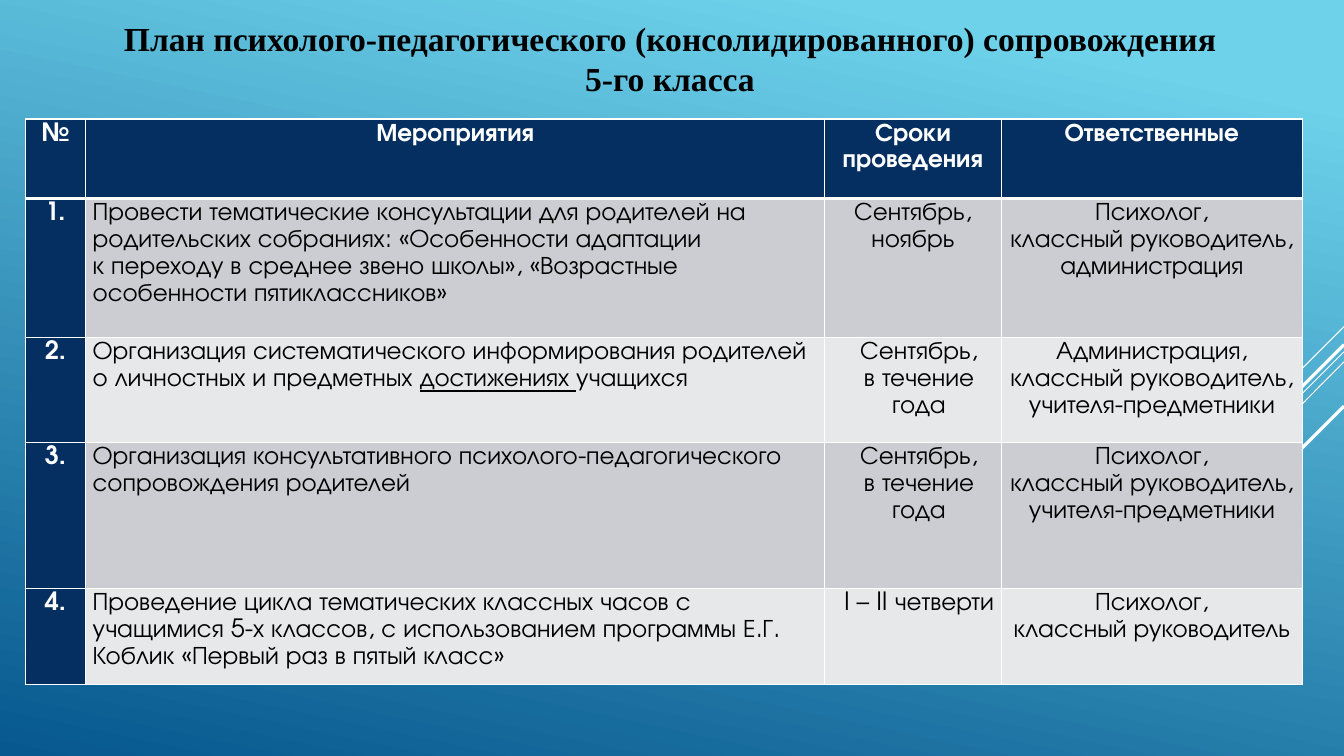
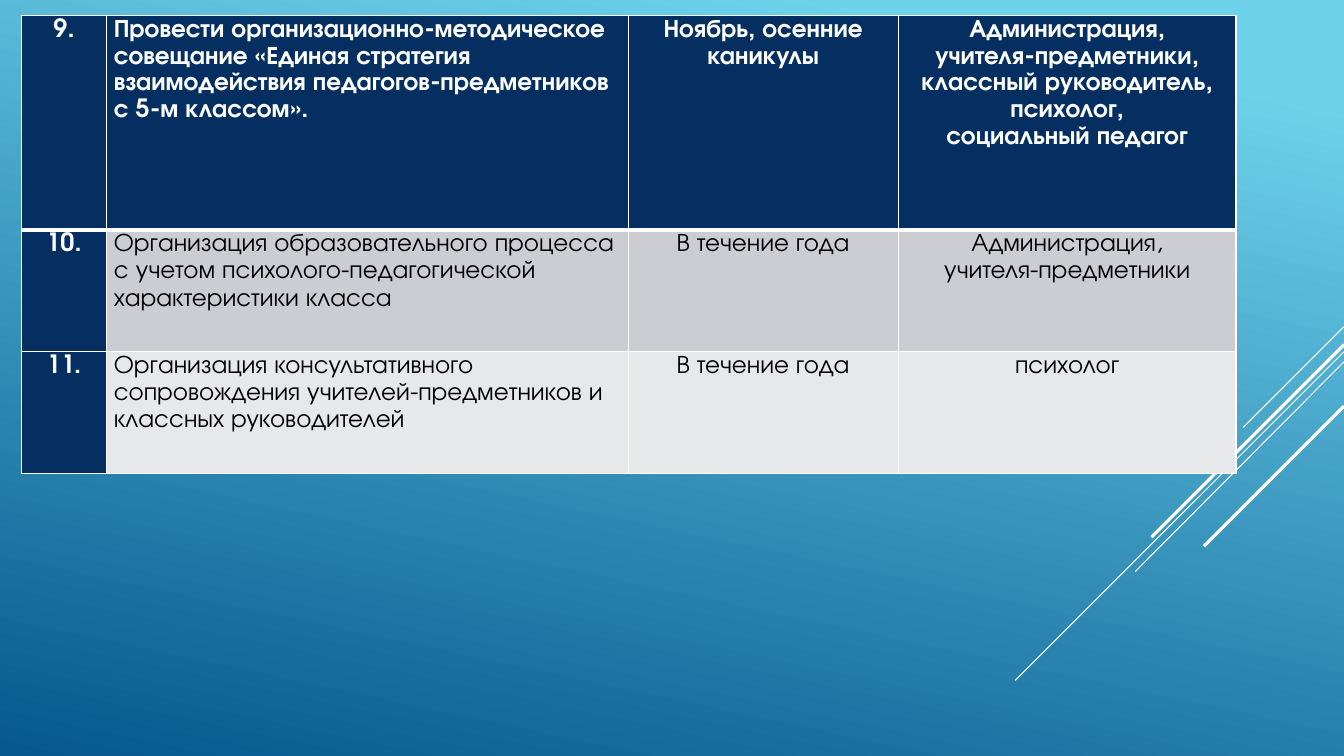
from lxml.etree import SubElement
from pptx import Presentation
from pptx.dml.color import RGBColor
from pptx.enum.shapes import MSO_CONNECTOR
from pptx.enum.text import MSO_ANCHOR, MSO_AUTO_SIZE, PP_ALIGN
from pptx.oxml.ns import qn
from pptx.util import Inches, Pt

NAVY, WHITE, BLACK = "052F61", "FFFFFF", "000000"
BANDS = ("CCCDD2", "E7E8EA")
BACKGROUND = ((0.1, "6ED2EB"), (1, "06588E"))
BODY_FONT, TITLE_FONT = "TeX Gyre Adventor", "Times New Roman"

RAYS = [
    (3.24, 12.33, 4.24, 0.75),
    (3.49, 10.07, 6.75, 0.75),
    (3.59, 11.26, 5.67, 0.75),
    (3.42, 11.42, 5.33, 2.25),
    (4.03, 11.94, 5.42, 2.25),
]

TITLE = ["План психолого-педагогического (консолидированного) сопровождения", "5-го класса"]

PLAN = [
    ["№", "Мероприятия", "Сроки проведения", "Ответственные"],
    ["1.",
     ["Провести тематические консультации для родителей на родительских собраниях: "
      "«Особенности адаптации",
      "к переходу в среднее звено школы», «Возрастные особенности пятиклассников»"],
     "Сентябрь, ноябрь",
     ["Психолог,", "классный руководитель, администрация"]],
    ["2.",
     [("Организация систематического информирования родителей о личностных и предметных ",
       "достижениях ", "учащихся")],
     ["Сентябрь,", "в течение года"],
     "Администрация, классный руководитель, учителя-предметники"],
    ["3.",
     "Организация консультативного психолого-педагогического сопровождения родителей",
     ["Сентябрь,", "в течение года"],
     ["Психолог,", "классный руководитель, учителя-предметники"]],
    ["4.",
     "Проведение цикла тематических классных часов с учащимися 5-х классов, "
     "с использованием программы Е.Г. Коблик «Первый раз в пятый класс»",
     "I – II четверти",
     ["Психолог,", "классный руководитель"]],
]

PLAN_END = [
    ["9.",
     "Провести организационно-методическое совещание «Единая стратегия взаимодействия "
     "педагогов-предметников с 5-м классом».",
     "Ноябрь, осенние каникулы",
     ["Администрация,", "учителя-предметники, классный руководитель, психолог,",
      "социальный педагог"]],
    ["10.",
     "Организация образовательного процесса с учетом психолого-педагогической "
     "характеристики класса",
     "В течение года",
     ["Администрация,", "учителя-предметники"]],
    ["11.",
     "Организация консультативного сопровождения учителей-предметников "
     "и классных руководителей",
     "В течение года",
     "психолог"],
]


def rgb(value):
    return RGBColor.from_string(value)


def write(tf, paragraphs, font=BODY_FONT, size=18, color=BLACK, bold=False,
          align=PP_ALIGN.LEFT, spacing=None, indent=0):
    if isinstance(paragraphs, str):
        paragraphs = [paragraphs]
    for i, runs in enumerate(paragraphs):
        p = tf.paragraphs[0] if i == 0 else tf.add_paragraph()
        p.alignment = align
        if spacing:
            p.line_spacing = spacing
        if indent:
            p._p.get_or_add_pPr().set("marL", str(Inches(indent)))
        for k, text in enumerate((runs,) if isinstance(runs, str) else runs):
            r = p.add_run()
            r.text = text
            r.font.name, r.font.size, r.font.bold = font, Pt(size), bold
            r.font.underline = k % 2 == 1
            r.font.color.rgb = rgb(color)


def set_borders(cell, top, bottom):
    tcPr = cell._tc.get_or_add_tcPr()
    widths = {"a:lnL": 1, "a:lnR": 1, "a:lnT": top, "a:lnB": bottom}
    for i, (tag, width) in enumerate(widths.items()):
        ln = SubElement(tcPr, qn(tag), w=str(Pt(width)))
        SubElement(SubElement(ln, qn("a:solidFill")), qn("a:srgbClr"), val=WHITE)
        tcPr.remove(ln)
        tcPr.insert(i, ln)


def add_plan(slide, rows, left, top, widths, heights, centred_header=False, indents=None):
    frame = slide.shapes.add_table(len(rows), len(widths), Inches(left), Inches(top),
                                   Inches(sum(widths)), Inches(sum(heights)))
    table = frame.table
    for column, width in zip(table.columns, widths):
        column.width = Inches(width)
    for i, (row, height) in enumerate(zip(rows, heights)):
        table.rows[i].height = Inches(height)
        for j, text in enumerate(row):
            cell = table.cell(i, j)
            dark = i == 0 or j == 0
            cell.fill.solid()
            cell.fill.fore_color.rgb = rgb(NAVY if dark else BANDS[(i - 1) % 2])
            cell.margin_left = cell.margin_right = Inches(0.07)
            cell.margin_top = cell.margin_bottom = 0
            left_aligned = j == 1 and not (centred_header and i == 0)
            write(cell.text_frame, text, color=WHITE if dark else BLACK, bold=dark,
                  align=PP_ALIGN.LEFT if left_aligned else PP_ALIGN.CENTER,
                  spacing=1.15, indent=(indents or {}).get((i, j), 0))
            set_borders(cell, 3 if i == 1 else 1, 3 if i == 0 else 1)


def style_master(prs, slide):
    master = prs.slide_master
    fill = master.background.fill
    fill.gradient()
    fill.gradient_angle = 258
    for stop, (position, color) in zip(fill.gradient_stops, BACKGROUND):
        stop.position, stop.color.rgb = position, rgb(color)
    for i, (y1, x2, y2, width) in enumerate(RAYS):
        ray = slide.shapes.add_connector(MSO_CONNECTOR.STRAIGHT, prs.slide_width, Inches(y1),
                                         Inches(x2), Inches(y2))
        ray.line.color.rgb, ray.line.width = rgb(WHITE), Pt(width)
        ray.name = f"Ray {i + 1}"
        el = ray._element
        SubElement(el.spPr, qn("a:effectLst"))
        el.nvCxnSpPr.cNvPr.set("id", str(100 + i))
        master.shapes._spTree.append(el)


def main():
    prs = Presentation()
    prs.slide_width, prs.slide_height = Inches(13.33), Inches(7.5)

    first = prs.slides.add_slide(prs.slide_layouts[5])
    style_master(prs, first)
    add_plan(first, PLAN, 0.25, 1.18, (0.6, 7.33, 1.75, 2.99), (0.79, 1.38, 1.04, 1.45, 0.95),
             centred_header=True, indents={(i, 2): 0.12 for i in (2, 3, 4)})
    title = first.shapes.title
    title.left, title.top, title.width, title.height = map(Inches, (0.1, 0.12, 13.09, 0.91))
    tf = title.text_frame
    tf.auto_size, tf.vertical_anchor = MSO_AUTO_SIZE.NONE, MSO_ANCHOR.MIDDLE
    write(tf, TITLE, font=TITLE_FONT, size=24, bold=True, align=PP_ALIGN.CENTER)

    second = prs.slides.add_slide(prs.slide_layouts[6])
    add_plan(second, PLAN_END, 0.21, 0.15, (0.85, 5.17, 2.68, 3.35), (2.13, 1.21, 1.21))

    prs.save("out.pptx")


if __name__ == "__main__":
    main()
